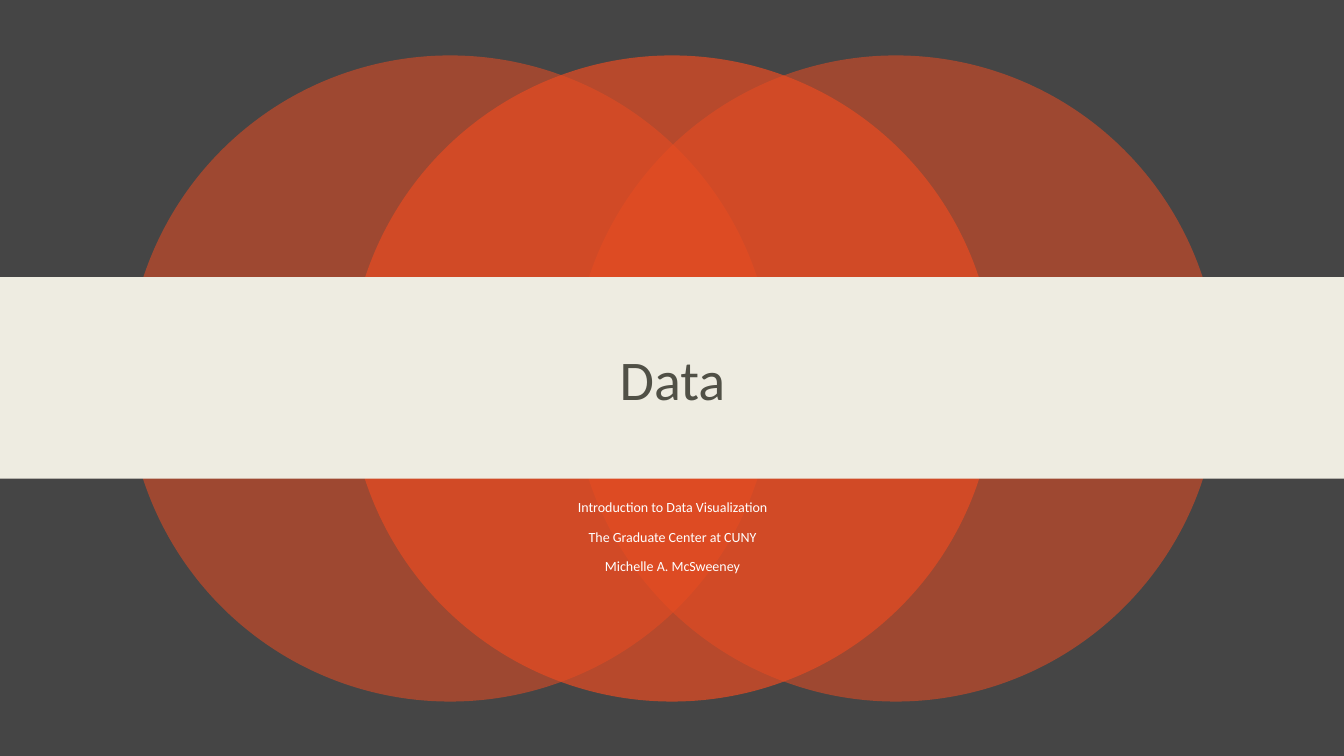
import pptx
import pptx.util
import pptx.dml.color
import pptx.enum.shapes
import pptx.enum.text
import pptx.oxml
import pptx.oxml.ns

Inches = pptx.util.Inches
Pt = pptx.util.Pt
RGBColor = pptx.dml.color.RGBColor
MSO_SHAPE = pptx.enum.shapes.MSO_SHAPE
MSO_ANCHOR = pptx.enum.text.MSO_ANCHOR

COLORS = {
    "background": "454545",
    "circle": "E84C22",
    "band": "EEECE1",
    "title": "505046",
    "subtitle": "FFFFFF",
}


def add_filled_shape(kind, left, top, width, height, color, opacity=100):
    shape = slide.shapes.add_shape(
        kind, Inches(left), Inches(top), Inches(width), Inches(height))
    shape.shadow.inherit = False
    shape.line.fill.background()
    shape.fill.solid()
    shape.fill.fore_color.rgb = RGBColor.from_string(COLORS[color])
    if opacity < 100:
        srgb = shape.fill._xPr.find(".//" + pptx.oxml.ns.qn("a:srgbClr"))
        alpha = pptx.oxml.parse_xml(
            f'<a:alpha {pptx.oxml.ns.nsdecls("a")} val="{opacity * 1000}"/>')
        srgb.append(alpha)


def add_centered_text(top, height, lines, size, color, anchor, space_before):
    text_box = slide.shapes.add_textbox(
        Inches(1.67), Inches(top), Inches(10), Inches(height))
    text_frame = text_box.text_frame
    text_frame.word_wrap = True
    text_frame.vertical_anchor = anchor
    text_frame.text = "\n".join(lines)
    for paragraph in text_frame.paragraphs:
        paragraph.alignment = pptx.enum.text.PP_ALIGN.CENTER
        paragraph.line_spacing = 0.9
        paragraph.space_before = Pt(space_before)
        for run in paragraph.runs:
            run.font.name = "Calibri"
            run.font.size = Pt(size)
            run.font.color.rgb = RGBColor.from_string(COLORS[color])


presentation = pptx.Presentation()
presentation.slide_width = Inches(13.33)
presentation.slide_height = Inches(7.5)
slide = presentation.slides.add_slide(presentation.slide_layouts[6])
slide.background.fill.solid()
slide.background.fill.fore_color.rgb = RGBColor.from_string(COLORS["background"])

for left, opacity in [(1.26, 55), (5.68, 55), (3.46, 70)]:
    add_filled_shape(MSO_SHAPE.OVAL, left, 0.55, 6.41, 6.41, "circle", opacity)

add_filled_shape(MSO_SHAPE.RECTANGLE, 0, 2.75, 13.33, 2, "band")

add_centered_text(3.04, 1.51, ["Data"], 40, "title", MSO_ANCHOR.MIDDLE, 0)
add_centered_text(
    4.92, 0.83,
    ["Introduction to Data Visualization",
     "The Graduate Center at CUNY",
     "Michelle A. McSweeney"],
    10, "subtitle", MSO_ANCHOR.TOP, 10)

presentation.save("out.pptx")
